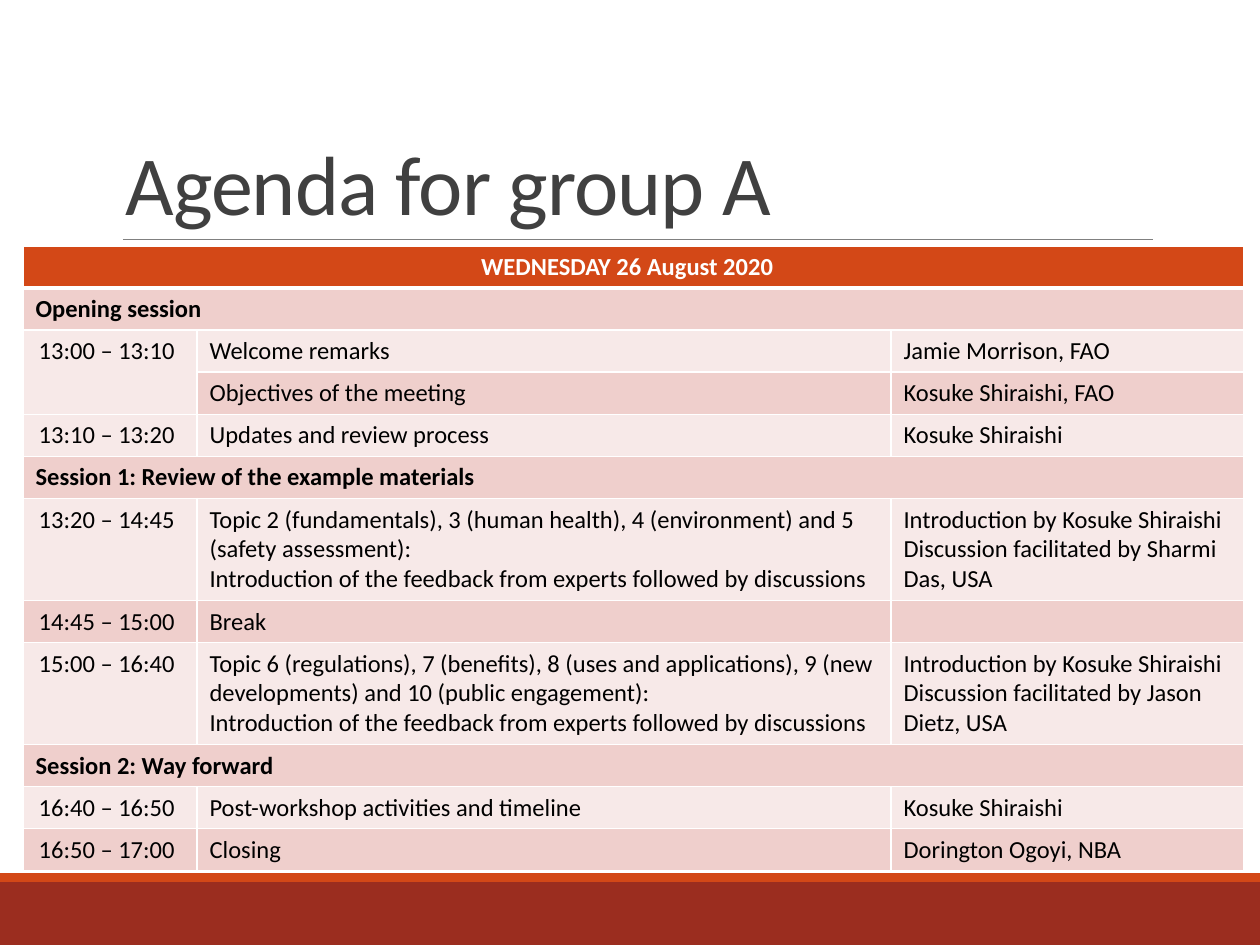
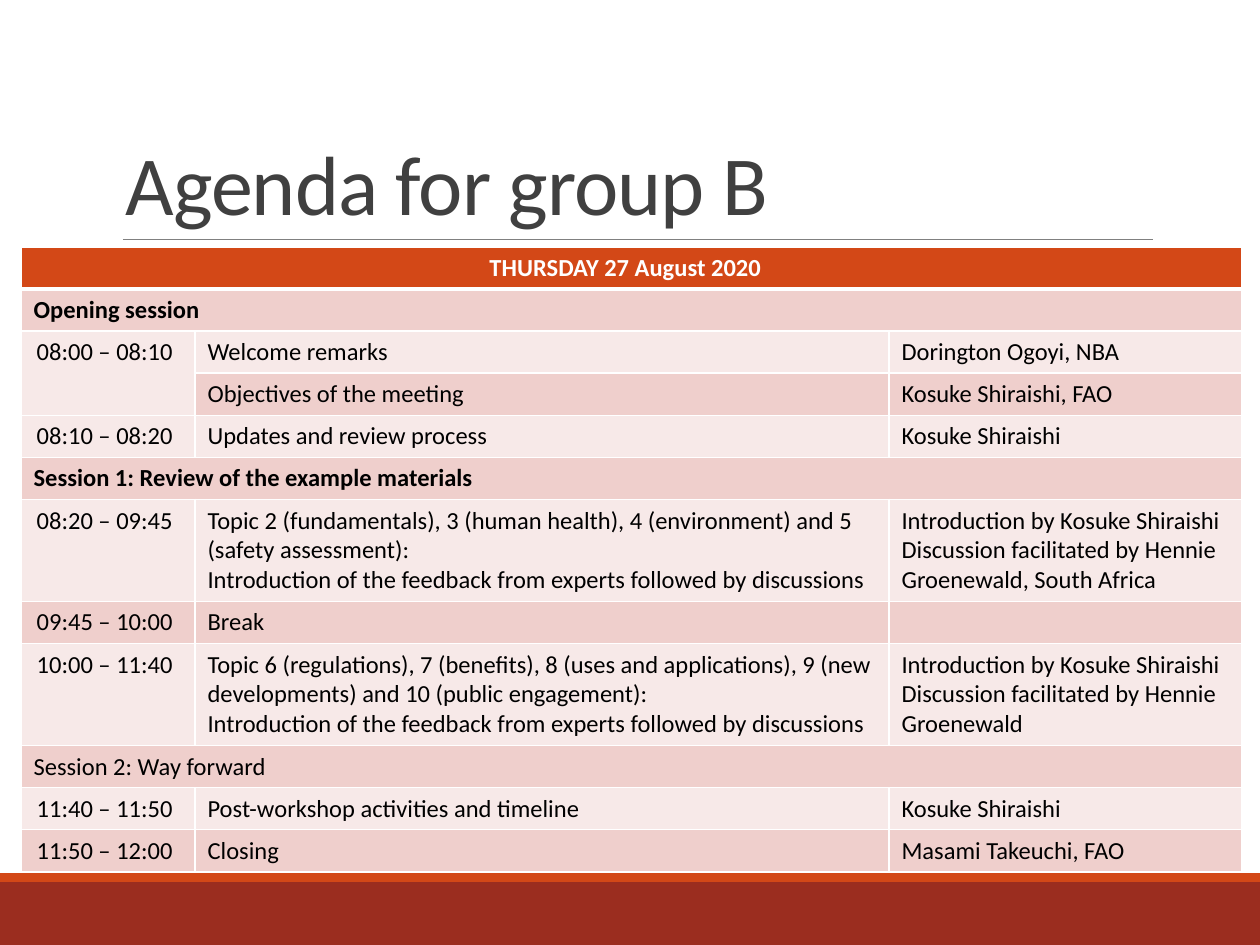
from lxml import etree
from pptx import Presentation
from pptx.dml.color import RGBColor
from pptx.enum.shapes import MSO_CONNECTOR, MSO_SHAPE
from pptx.enum.text import MSO_ANCHOR, PP_ALIGN
from pptx.oxml.ns import qn
from pptx.util import Emu, Pt

RECTANGLE = MSO_SHAPE.RECTANGLE
STRAIGHT = MSO_CONNECTOR.STRAIGHT
BOTTOM = MSO_ANCHOR.BOTTOM
LEFT, CENTER = PP_ALIGN.LEFT, PP_ALIGN.CENTER

EMU_PER_PX = 914400 / 126
SLIDE_W, SLIDE_H = 1260, 945
FONT = "Calibri"
WHITE, BLACK, TITLE_GREY, RULE_GREY = "FFFFFF", "000000", "404040", "808080"
ORANGE, BRICK = "D34817", "9B2D1F"
BANDS = ("F7E9E8", "EFCFCC")

COLUMN_WIDTHS = (174, 694, 353)
LINE_H, ROW_PADDING = 30, 12
DATE_INSET, TIME_INSET = 25, 19

FEEDBACK = "Introduction of the feedback from experts followed by discussions"
BASICS = ("Topic 2 (fundamentals), 3 (human health), 4 (environment) and 5 "
          "(safety assessment):\n" + FEEDBACK)
APPLICATIONS = ("Topic 6 (regulations), 7 (benefits), 8 (uses and applications), 9 (new "
                "developments) and 10 (public engagement):\n" + FEEDBACK)
HOST = "Kosuke Shiraishi"


def px(length):
    return Emu(round(length * EMU_PER_PX))


def rgb(hex_color):
    return RGBColor.from_string(hex_color)


def write_text(frame, text, size=14, color=BLACK, bold=False, align=LEFT,
               line_spacing=None, tracking=None):
    """Write one paragraph per line of text; tracking is in hundredths of a point."""
    for index, line in enumerate(text.split("\n")):
        paragraph = frame.paragraphs[0] if index == 0 else frame.add_paragraph()
        paragraph.alignment = align
        if line_spacing:
            paragraph.line_spacing = line_spacing
        if not line:
            # An empty cell still needs its size, or its row grows.
            end = etree.SubElement(paragraph._p, qn("a:endParaRPr"))
            end.set("sz", str(size * 100))
            continue
        run = paragraph.add_run()
        run.text = line
        run.font.name = FONT
        run.font.size = Pt(size)
        run.font.bold = bold
        run.font.color.rgb = rgb(color)
        if tracking:
            run._r.get_or_add_rPr().set("spc", str(tracking))


def add_band(slide, top, height, color):
    band = slide.shapes.add_shape(RECTANGLE, 0, px(top), px(SLIDE_W), px(height))
    band.shadow.inherit = False
    band.fill.solid()
    band.fill.fore_color.rgb = rgb(color)
    band.line.fill.background()


def add_rule(slide, left, right, y):
    rule = slide.shapes.add_connector(STRAIGHT, px(left), px(y), px(right), px(y))
    rule.line.color.rgb = rgb(RULE_GREY)
    rule.line.width = Pt(0.5)
    etree.SubElement(rule._element.spPr, qn("a:effectLst"))


def add_title(slide, text):
    title = slide.shapes.add_textbox(px(113), px(39), px(1040), px(200))
    frame = title.text_frame
    frame.word_wrap = True
    frame.vertical_anchor = BOTTOM
    write_text(frame, text, size=48, color=TITLE_GREY, line_spacing=0.85, tracking=-50)


def set_borders(cell, top=1, bottom=1):
    """Draw white borders; widths are in points."""
    properties = cell._tc.get_or_add_tcPr()
    sides = (("L", 1), ("R", 1), ("T", top), ("B", bottom))
    for position, (side, width) in enumerate(sides):
        border = etree.Element(qn(f"a:ln{side}"), w=str(Pt(width)))
        fill = etree.SubElement(border, qn("a:solidFill"))
        etree.SubElement(fill, qn("a:srgbClr"), val=WHITE)
        properties.insert(position, border)


def style_cell(cell, row):
    cell.fill.solid()
    cell.fill.fore_color.rgb = rgb(BANDS[row % 2] if row else ORANGE)
    set_borders(cell, top=3 if row == 1 else 1, bottom=1 if row else 3)


def add_agenda(slide, left, top, date, entries, plain_sections=()):
    """Entries of one item span the row; an empty time joins the time above."""
    rows = [(date,), *entries]
    line_counts = [max(item.count("\n") + 1 for item in row) for row in rows]
    # Entries with two paragraphs wrap once, so they take three lines.
    heights = [ROW_PADDING + LINE_H * (1 if count == 1 else 3) for count in line_counts]
    table = slide.shapes.add_table(
        len(rows), len(COLUMN_WIDTHS), px(left), px(top),
        px(sum(COLUMN_WIDTHS)), px(sum(heights))).table
    for column, width in zip(table.columns, COLUMN_WIDTHS):
        column.width = px(width)

    for r, (row, height) in enumerate(zip(rows, heights)):
        table.rows[r].height = px(height)
        is_section = len(row) == 1
        for c in range(len(COLUMN_WIDTHS)):
            cell = table.cell(r, c)
            style_cell(cell, r)
            text = row[c] if c < len(row) else ""
            centred = c == 0 and (r == 0 or not is_section)
            if centred:
                cell.margin_right = px(TIME_INSET if r else DATE_INSET)
            write_text(cell.text_frame, text,
                       color=BLACK if r else WHITE,
                       bold=is_section and text not in plain_sections,
                       align=CENTER if centred else LEFT)
        if is_section:
            table.cell(r, 0).merge(table.cell(r, len(COLUMN_WIDTHS) - 1))
        elif not row[0]:
            table.cell(r - 1, 0).merge(table.cell(r, 0))


def workshop_entries(times, welcome, basics_lead, applications_lead, closing):
    """Lay out the programme that both groups follow."""
    opening, updates, basics, pause, applications, follow_up, end = times
    intro = f"Introduction by {HOST}\nDiscussion facilitated by "
    return [
        ("Opening session",),
        (opening, "Welcome remarks", welcome),
        ("", "Objectives of the meeting", f"{HOST}, FAO"),
        (updates, "Updates and review process", HOST),
        ("Session 1: Review of the example materials",),
        (basics, BASICS, intro + basics_lead),
        (pause, "Break", ""),
        (applications, APPLICATIONS, intro + applications_lead),
        ("Session 2: Way forward",),
        (follow_up, "Post-workshop activities and timeline", HOST),
        (end, "Closing", closing),
    ]


def add_agenda_slide(deck, title):
    slide = deck.slides.add_slide(deck.slide_layouts[6])
    add_band(slide, 882, 63, BRICK)
    add_band(slide, 873, 9, ORANGE)
    add_rule(slide, 123, 1153, 239)
    add_title(slide, title)
    return slide


def main():
    deck = Presentation()
    deck.slide_width, deck.slide_height = px(SLIDE_W), px(SLIDE_H)

    group_a = add_agenda_slide(deck, "Agenda for group A")
    add_agenda(group_a, 23, 246, "WEDNESDAY 26 August 2020", workshop_entries(
        ("13:00 – 13:10", "13:10 – 13:20", "13:20 – 14:45", "14:45 – 15:00",
         "15:00 – 16:40", "16:40 – 16:50", "16:50 – 17:00"),
        welcome="Jamie Morrison, FAO",
        basics_lead="Sharmi Das, USA",
        applications_lead="Jason Dietz, USA",
        closing="Dorington Ogoyi, NBA"))

    group_b = add_agenda_slide(deck, "Agenda for group B")
    add_agenda(group_b, 21, 247, "THURSDAY 27 August 2020", workshop_entries(
        ("08:00 – 08:10", "08:10 – 08:20", "08:20 – 09:45", "09:45 – 10:00",
         "10:00 – 11:40", "11:40 – 11:50", "11:50 – 12:00"),
        welcome="Dorington Ogoyi, NBA",
        basics_lead="Hennie Groenewald, South Africa",
        applications_lead="Hennie Groenewald",
        closing="Masami Takeuchi, FAO"),
        plain_sections=("Session 2: Way forward",))

    deck.save("out.pptx")


if __name__ == "__main__":
    main()
